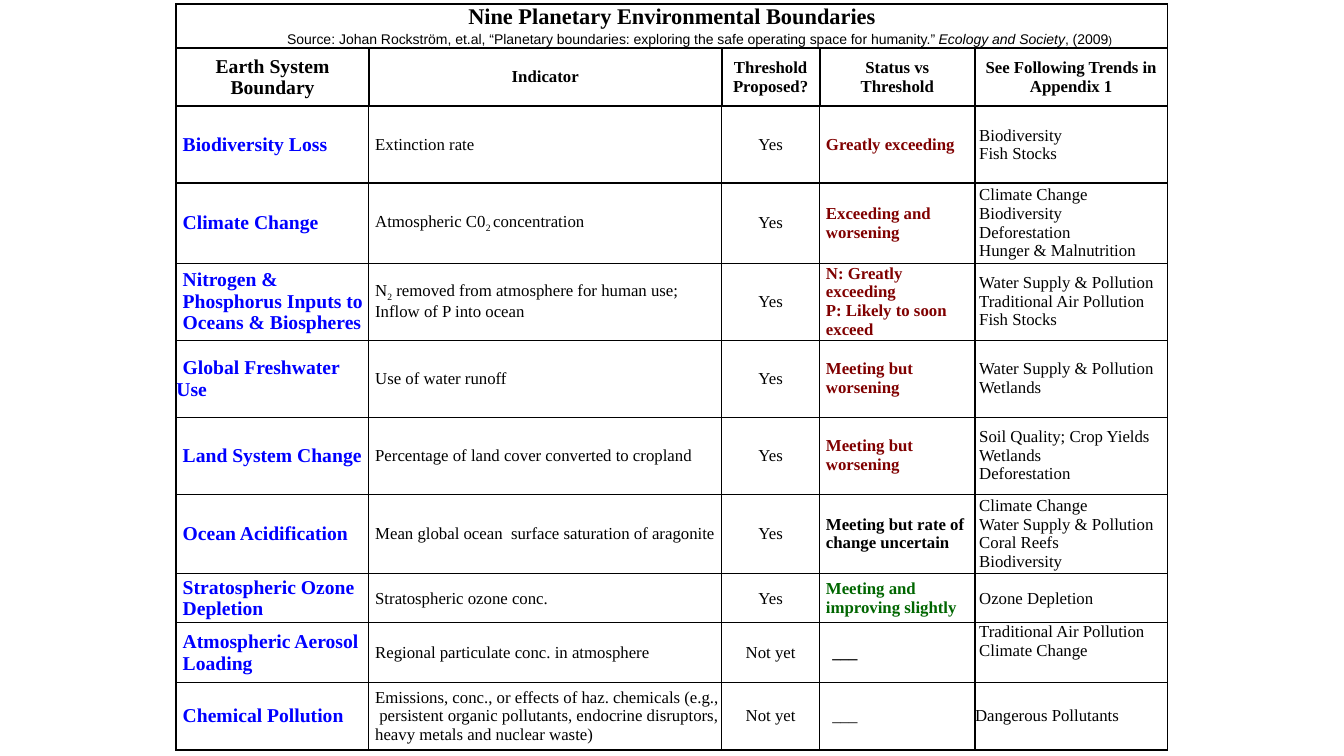
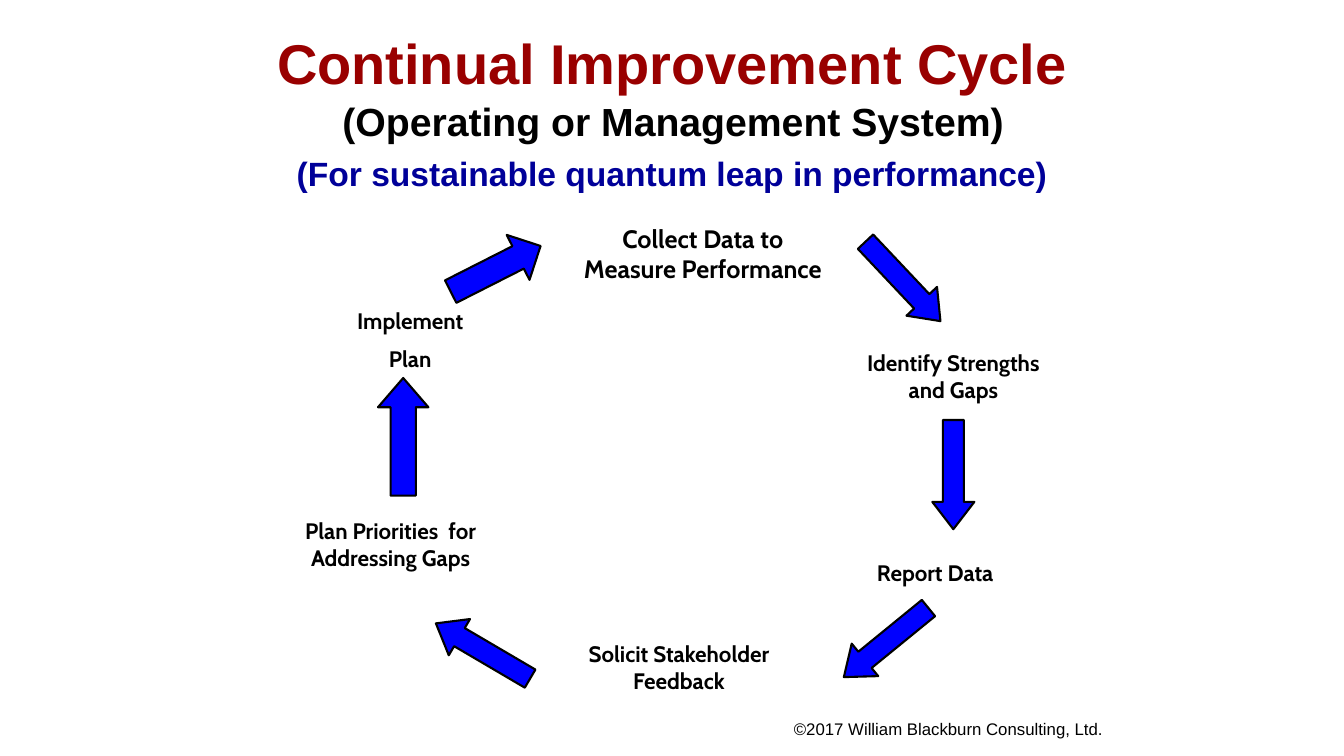
from dataclasses import dataclass, replace

from lxml import etree
from pptx import Presentation, util as u
from pptx.dml.color import RGBColor
from pptx.enum import shapes, text
from pptx.oxml.ns import qn

Pt = u.Pt
COLORS = {
    "black": "000000", "white": "FFFFFF", "blue": "0000FF", "navy": "000099",
    "red": "990000", "maroon": "800000", "green": "006600",
}
LEFT, CENTER = text.PP_ALIGN.LEFT, text.PP_ALIGN.CENTER
TOP, MIDDLE = text.MSO_ANCHOR.TOP, text.MSO_ANCHOR.MIDDLE


@dataclass(frozen=True)
class Style:
    font: str
    size: float
    color: str = "black"
    bold: bool = False
    align: text.PP_ALIGN = LEFT
    indent: float = 0      # left indent of the whole paragraph
    first: float = 0       # extra indent of the first line
    spacing: float = 1
    gap: float = 0         # space before each later paragraph
    marked: str = "sub"    # look of the words between tildes


@dataclass(frozen=True)
class Label:
    x: float
    y: float
    w: float
    h: float
    style: Style
    lines: tuple[str, ...]


@dataclass(frozen=True)
class Arrow:
    x: float
    y: float
    angle: float
    w: float = 78
    h: float = 30
    head: float = 0.65


@dataclass(frozen=True)
class Boundary:
    height: float
    name: str
    indicator: tuple[str, ...]
    proposed: str
    status: tuple[str, ...]
    status_style: Style
    trends: tuple[str, ...]


# Text styles
BODY = Style("Times New Roman", 12)
INDENTED = replace(BODY, indent=4.5)
TREND = replace(BODY, indent=3)
CENTERED = replace(BODY, align=CENTER)
HEADER = replace(CENTERED, bold=True)
NAME = replace(INDENTED, size=14, color="blue", bold=True)
NAME_FIRST_LINE = replace(NAME, indent=0, first=4.5)
EXCEEDING = replace(INDENTED, color="maroon", bold=True)
UNCERTAIN = replace(EXCEEDING, color="black")
IMPROVING = replace(EXCEEDING, color="green")
DASH = replace(BODY, indent=9)
SOURCE = Style("Arial", 10, marked="italic")
STEP = Style("Cabin", 16, bold=True, align=CENTER)
HEADING = Style("Arial", 40, "red", bold=True, align=CENTER, spacing=0.85)

# Slide 1 content
TABLE_X, TABLE_Y = 126, 3
COLUMNS = (137.5, 252, 70, 111, 137.5)
TITLE_HEIGHT, HEADER_HEIGHT = 31.5, 41.5
HEADERS = (("Earth System Boundary",), ("Indicator",), ("Threshold Proposed?",),
           ("Status vs", "Threshold"), ("See Following Trends in Appendix 1",))
BOUNDARIES = (
    Boundary(55, "Biodiversity Loss", ("Extinction rate",), "Yes",
             ("Greatly exceeding",), EXCEEDING, ("Biodiversity", "Fish Stocks")),
    Boundary(57, "Climate Change", ("Atmospheric C0~2 ~concentration",), "Yes",
             ("Exceeding and worsening",), EXCEEDING,
             ("Climate Change", "Biodiversity", "Deforestation", "Hunger & Malnutrition")),
    Boundary(55, "Nitrogen & Phosphorus Inputs to Oceans & Biospheres",
             ("N~2~ removed from atmosphere for human use;", "Inflow of P into ocean"), "Yes",
             ("N: Greatly exceeding", "P: Likely to soon exceed"), EXCEEDING,
             ("Water Supply & Pollution", "Traditional Air Pollution", "Fish Stocks")),
    Boundary(55, "Global Freshwater Use", ("Use of water runoff",), "Yes",
             ("Meeting but worsening",), EXCEEDING,
             ("Water Supply & Pollution", "Wetlands")),
    Boundary(55, "Land System Change",
             ("Percentage of land cover converted to cropland",), "Yes",
             ("Meeting but worsening",), EXCEEDING,
             ("Soil Quality; Crop Yields", "Wetlands", "Deforestation")),
    Boundary(57, "Ocean Acidification",
             ("Mean global ocean  surface saturation of aragonite",), "Yes",
             ("Meeting but rate of change uncertain",), UNCERTAIN,
             ("Climate Change", "Water Supply & Pollution", "Coral Reefs", "Biodiversity")),
    Boundary(35, "Stratospheric Ozone Depletion", ("Stratospheric ozone conc.",), "Yes",
             ("Meeting and improving slightly",), IMPROVING, ("Ozone Depletion",)),
    Boundary(42.5, "Atmospheric Aerosol Loading",
             ("Regional particulate conc. in atmosphere",), "Not yet",
             ("___",), replace(DASH, bold=True),
             ("Traditional Air Pollution", "Climate Change")),
    Boundary(48.5, "Chemical Pollution",
             ("Emissions, conc., or effects of haz. chemicals (e.g.,  persistent organic "
              "pollutants, endocrine disruptors, heavy metals and nuclear waste)",), "Not yet",
             ("___",), DASH, ("Dangerous Pollutants",)),
)

# Slide 2 content
LABELS = (
    Label(156, 24, 648, 48, HEADING, ("Continual Improvement Cycle",)),
    Label(121.5, 66, 718.5, 46, replace(HEADING, size=28, color="black", spacing=1),
          ("(Operating or Management System)",)),
    Label(120, 106, 720, 36, replace(HEADING, size=24, color="navy", spacing=1),
          ("(For sustainable quantum leap in performance)",)),
    Label(396, 156, 212, 50, replace(STEP, size=18), ("Collect Data to", "Measure Performance")),
    Label(600, 246, 162, 46, STEP, ("Identify Strengths", "and Gaps")),
    Label(612, 396, 112, 27, STEP, ("Report Data",)),
    Label(402, 454, 166, 46, STEP, ("Solicit Stakeholder", "Feedback")),
    Label(198, 366, 162, 46, STEP, ("Plan Priorities  for", "Addressing Gaps")),
    Label(216, 216, 154, 55, replace(STEP, gap=8), ("Implement", "Plan")),
    Label(560, 510, 246, 21.5, Style("Arial", 12),
          ("©2017 William Blackburn Consulting, Ltd.",)),
)
ARROWS = (
    Arrow(318, 174, 153.1, w=72, h=36, head=0.5),
    Arrow(606, 186, 226.7),
    Arrow(642, 324, 270),
    Arrow(594, 444, 320.8),
    Arrow(306, 450, 30.4),
    Arrow(246, 294, 90, w=84, h=36, head=0.58),
)


def rgb(name: str) -> RGBColor:
    return RGBColor.from_string(COLORS[name])


def write(tf, lines: tuple[str, ...], style: Style) -> None:
    """Write one paragraph per line; words between tildes get the marked look."""
    for n, line in enumerate(lines):
        p = tf.add_paragraph() if n else tf.paragraphs[0]
        p.alignment, p.line_spacing = style.align, style.spacing
        if n and style.gap:
            p.space_before = Pt(style.gap)
        pPr = p._p.get_or_add_pPr()
        pPr.set("marL", str(Pt(style.indent)))
        pPr.set("indent", str(Pt(style.first)))
        p.font.name, p.font.size, p.font.bold = style.font, Pt(style.size), style.bold
        p.font.color.rgb = rgb(style.color)
        for i, part in enumerate(line.split("~")):
            r = p.add_run()
            r.text = part
            if i % 2 and style.marked == "italic":
                r.font.italic = True
            elif i % 2:
                r._r.get_or_add_rPr().set("baseline", "-25000")


def add_label(s, label: Label):
    sp = s.shapes.add_textbox(Pt(label.x), Pt(label.y), Pt(label.w), Pt(label.h))
    tf = sp.text_frame
    tf.word_wrap, tf.vertical_anchor = True, TOP
    write(tf, label.lines, label.style)
    return tf


def add_arrow(s, arrow: Arrow) -> None:
    sp = s.shapes.add_shape(shapes.MSO_SHAPE.LEFT_ARROW, Pt(arrow.x), Pt(arrow.y),
                            Pt(arrow.w), Pt(arrow.h))
    sp.adjustments[0], sp.adjustments[1] = 0.5, arrow.head
    sp.rotation = arrow.angle
    sp.shadow.inherit = False
    sp.fill.solid()
    sp.fill.fore_color.rgb = rgb("blue")
    sp.line.color.rgb = rgb("black")
    sp.line.width = Pt(1.5)


def set_borders(cell, widths: dict[str, float]) -> None:
    tcPr = cell._tc.get_or_add_tcPr()
    for n, (side, width) in enumerate(widths.items()):
        ln = etree.Element(qn(f"a:ln{side}"), w=str(Pt(width)))
        fill = etree.SubElement(ln, qn("a:solidFill"))
        etree.SubElement(fill, qn("a:srgbClr"), val=COLORS["black"])
        tcPr.insert(n, ln)


def format_cell(cell, row: int, col: int, last_row: int) -> None:
    """Heavy lines run round the table, the title, the header and the first boundary."""
    side_margin = 6 if row < 2 else 0
    cell.margin_left = cell.margin_right = Pt(side_margin)
    cell.margin_top = cell.margin_bottom = Pt(0)
    cell.vertical_anchor = MIDDLE
    cell.fill.background()
    heavy = {"L": row < 2 or col == 0, "R": row < 2 or col == len(COLUMNS) - 1,
             "T": row < 4, "B": row < 3 or row == last_row}
    set_borders(cell, {side: 1.5 if is_heavy else 1 for side, is_heavy in heavy.items()})


def add_boundary_table(s) -> None:
    heights = (TITLE_HEIGHT, HEADER_HEIGHT, *(b.height for b in BOUNDARIES))
    table = s.shapes.add_table(len(heights), len(COLUMNS), Pt(TABLE_X), Pt(TABLE_Y),
                               Pt(sum(COLUMNS)), Pt(sum(heights))).table
    table.first_row = table.horz_banding = False
    for column, width in zip(table.columns, COLUMNS):
        column.width = Pt(width)
    for n, height in enumerate(heights):
        table.rows[n].height = Pt(height)
        for col in range(len(COLUMNS)):
            format_cell(table.cell(n, col), n, col, len(heights) - 1)

    # Title and header rows
    title = table.cell(0, 0)
    title.merge(table.cell(0, len(COLUMNS) - 1))
    title.vertical_anchor = TOP
    write(title.text_frame, ("Nine Planetary Environmental Boundaries",),
          replace(HEADER, size=16))
    for col, lines in enumerate(HEADERS):
        write(table.cell(1, col).text_frame, lines, replace(HEADER, size=12 if col else 14))

    # One row per boundary
    for n, b in enumerate(BOUNDARIES, start=2):
        name_style = NAME_FIRST_LINE if b.name.startswith("Global") else NAME
        trend_style = BODY if b is BOUNDARIES[-1] else TREND
        contents = (((b.name,), name_style), (b.indicator, INDENTED),
                    ((b.proposed,), CENTERED), (b.status, b.status_style),
                    (b.trends, trend_style))
        for col, (lines, style) in enumerate(contents):
            write(table.cell(n, col).text_frame, lines, style)
        if b.name.startswith("Atmospheric"):
            table.cell(n, 4).vertical_anchor = TOP


def build_boundaries(s) -> None:
    add_boundary_table(s)
    source = ("Source: Johan Rockström, et.al, “Planetary boundaries: exploring the safe "
              "operating space for humanity.” ~Ecology and Society~, (2009")
    tf = add_label(s, Label(198, 18, 620, 19.5, SOURCE, (source,)))
    tf.vertical_anchor = MIDDLE
    r = tf.paragraphs[0].add_run()
    r.text = ")"
    r.font.size = Pt(8)


def build_cycle(s) -> None:
    for label in LABELS:
        add_label(s, label)
    for arrow in ARROWS:
        add_arrow(s, arrow)


def main() -> None:
    prs = Presentation()
    prs.slide_width, prs.slide_height = Pt(960), Pt(540)
    for build in (build_boundaries, build_cycle):
        build(prs.slides.add_slide(prs.slide_layouts[6]))
    prs.save("out.pptx")


if __name__ == "__main__":
    main()
